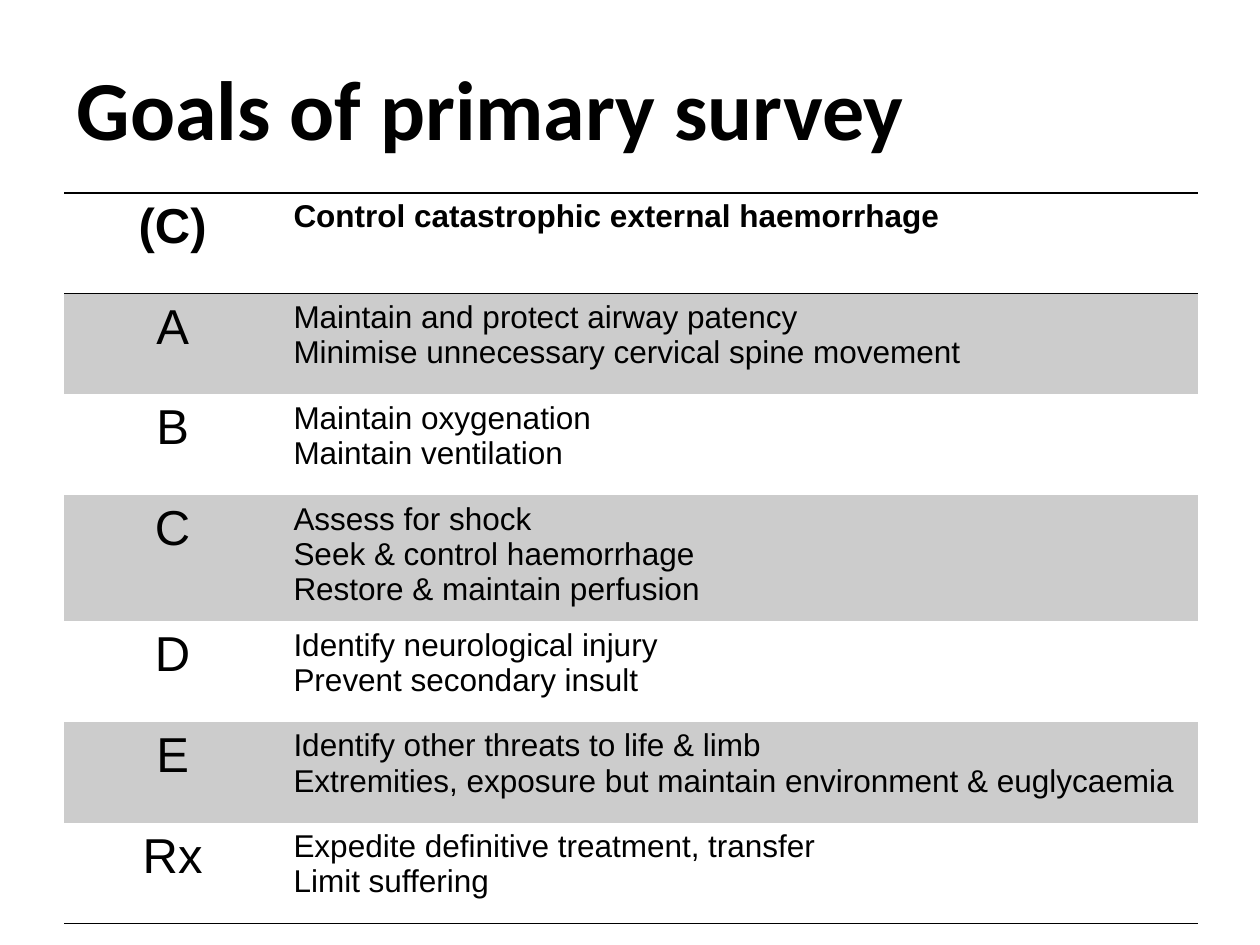
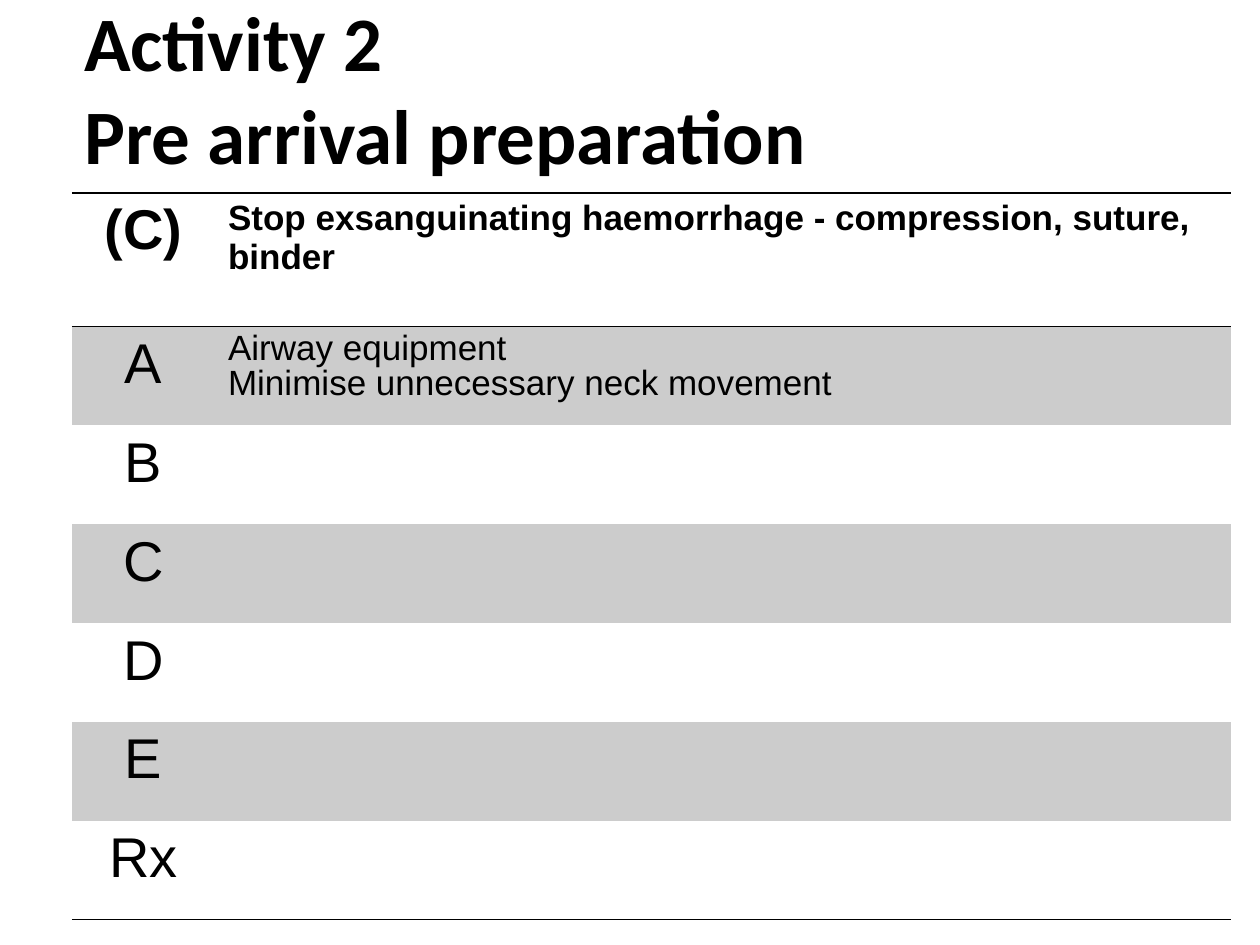
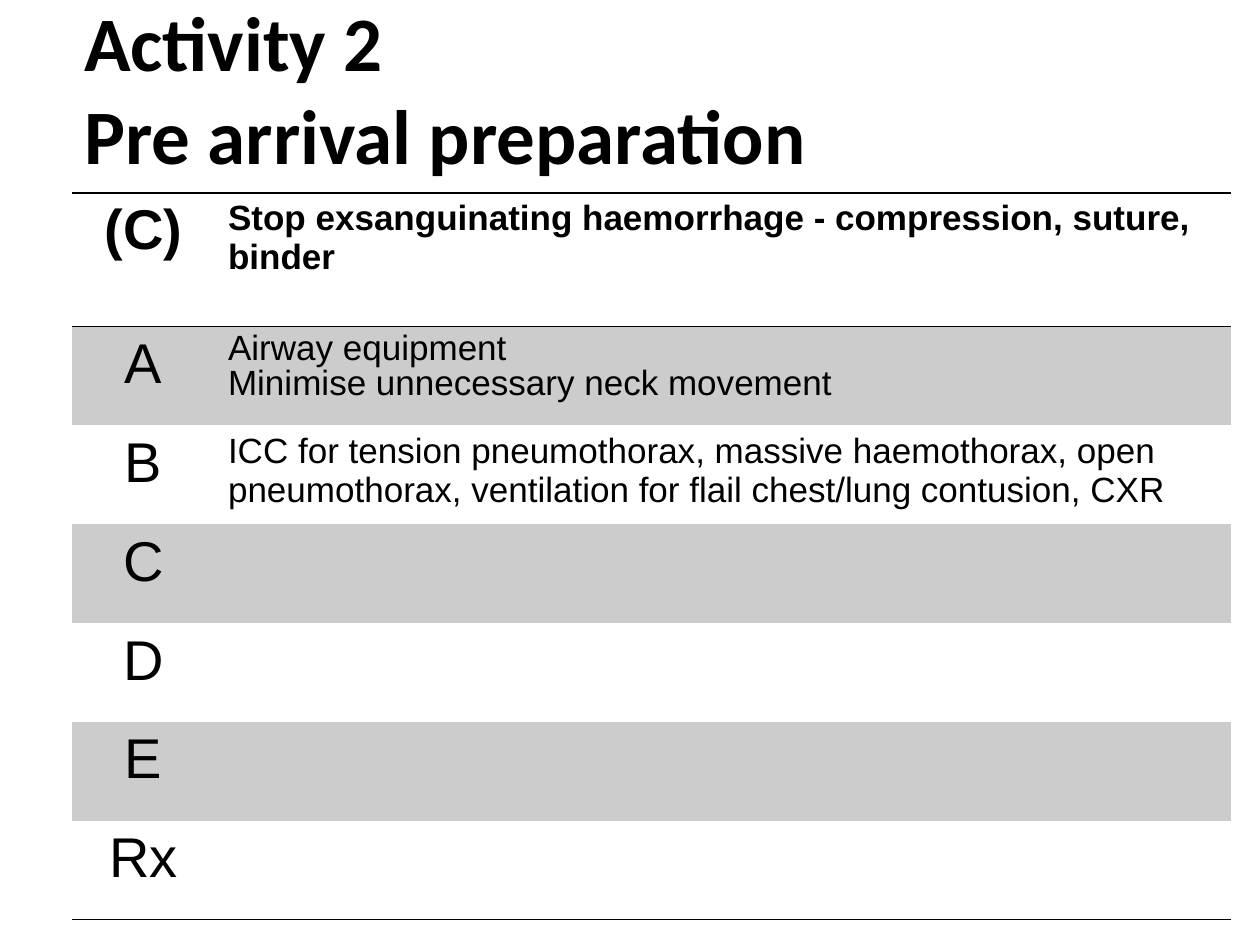
from lxml import etree
from pptx import Presentation
from pptx import util as u
from pptx.dml.color import RGBColor
from pptx.enum import text
from pptx.oxml.ns import qn

BLACK = "000000"
BAND = "CCCCCC"
NO_STYLE = "{2D5ABB26-0587-4C30-8999-92F81FD0307C}"
LETTERS = ["(C)", "A", "B", "C", "D", "E", "Rx"]


def rgb(value):
    return RGBColor.from_string(value)


def add_border(cell, side):
    ln = etree.SubElement(cell._tc.get_or_add_tcPr(), qn("a:" + side), w=str(u.Pt(1)))
    fill = etree.SubElement(ln, qn("a:solidFill"))
    etree.SubElement(fill, qn("a:srgbClr"), val=BLACK)


goals = [
    "Control catastrophic external haemorrhage",
    "Maintain and protect airway patency\nMinimise unnecessary cervical spine movement",
    "Maintain oxygenation\nMaintain ventilation",
    "Assess for shock\nSeek & control haemorrhage\nRestore & maintain perfusion",
    "Identify neurological injury\nPrevent secondary insult",
    "Identify other threats to life & limb\n"
    "Extremities, exposure but maintain environment & euglycaemia",
    "Expedite definitive treatment, transfer\nLimit suffering",
]
preparation = [
    "Stop exsanguinating haemorrhage - compression, suture, binder",
    "Airway equipment\nMinimise unnecessary neck movement",
    "", "", "", "", "",
]
breathing = ("ICC for tension pneumothorax, massive haemothorax, open pneumothorax, "
             "ventilation for flail chest/lung contusion, CXR")

survey = dict(
    title="Goals of primary survey", title_size=48, title_box=(0.51, 0.36, 9, 0.94),
    anchor=text.MSO_ANCHOR.MIDDLE, cols=(1.72, 7.28), sizes=(28, 18),
    heights=[0.8] * 3 + [0.94] + [0.8] * 3, airway_spacing=1.0, texts=goals)
activity = dict(
    title="Activity 2\nPre arrival preparation", title_size=44,
    title_box=(0.57, -0.12, 7.83, 0.75), anchor=text.MSO_ANCHOR.TOP,
    cols=(1.14, 8.06), sizes=(32, 20), heights=[1.06] + [4.71 / 6] * 6,
    airway_spacing=0.9, texts=preparation)
answered = dict(activity, texts=preparation[:2] + [breathing] + preparation[3:])

prs = Presentation()
prs.slide_width = u.Inches(10)
prs.slide_height = u.Inches(7.5)

for page in (survey, activity, answered):
    s = prs.slides.add_slide(prs.slide_layouts[6])

    tf = s.shapes.add_textbox(*[u.Inches(v) for v in page["title_box"]]).text_frame
    tf.word_wrap = True
    tf.vertical_anchor = page["anchor"]
    tf.margin_top = u.Inches(0.08)
    tf.text = page["title"]
    for p in tf.paragraphs:
        p.font.name = "Calibri"
        p.font.size = u.Pt(page["title_size"])
        p.font.bold = True
        p.font.color.rgb = rgb(BLACK)

    cols, heights = page["cols"], page["heights"]
    table = s.shapes.add_table(
        len(LETTERS), 2, u.Inches(page["title_box"][0]), u.Inches(1.53),
        u.Inches(sum(cols)), u.Inches(sum(heights))).table
    table.first_row = False
    table.horz_banding = False
    table._tbl.tblPr.find(qn("a:tableStyleId")).text = NO_STYLE
    for column, width in zip(table.columns, cols):
        column.width = u.Inches(width)

    for i, row in enumerate(zip(LETTERS, page["texts"])):
        table.rows[i].height = u.Inches(heights[i])
        for j, content in enumerate(row):
            cell = table.cell(i, j)
            if i == 0:
                add_border(cell, "lnT")
            if i in (0, len(LETTERS) - 1):
                add_border(cell, "lnB")
            if i % 2:
                cell.fill.solid()
                cell.fill.fore_color.rgb = rgb(BAND)
            else:
                cell.fill.background()
            if not content:
                continue
            cell.text_frame.text = content
            for p in cell.text_frame.paragraphs:
                if j == 0:
                    p.alignment = text.PP_ALIGN.CENTER
                elif i == 1:
                    p.line_spacing = page["airway_spacing"]
                for r in p.runs:
                    r.font.name = "Arial"
                    r.font.size = u.Pt(page["sizes"][j])
                    r.font.bold = i == 0
                    r.font.color.rgb = rgb(BLACK)

prs.save("out.pptx")
